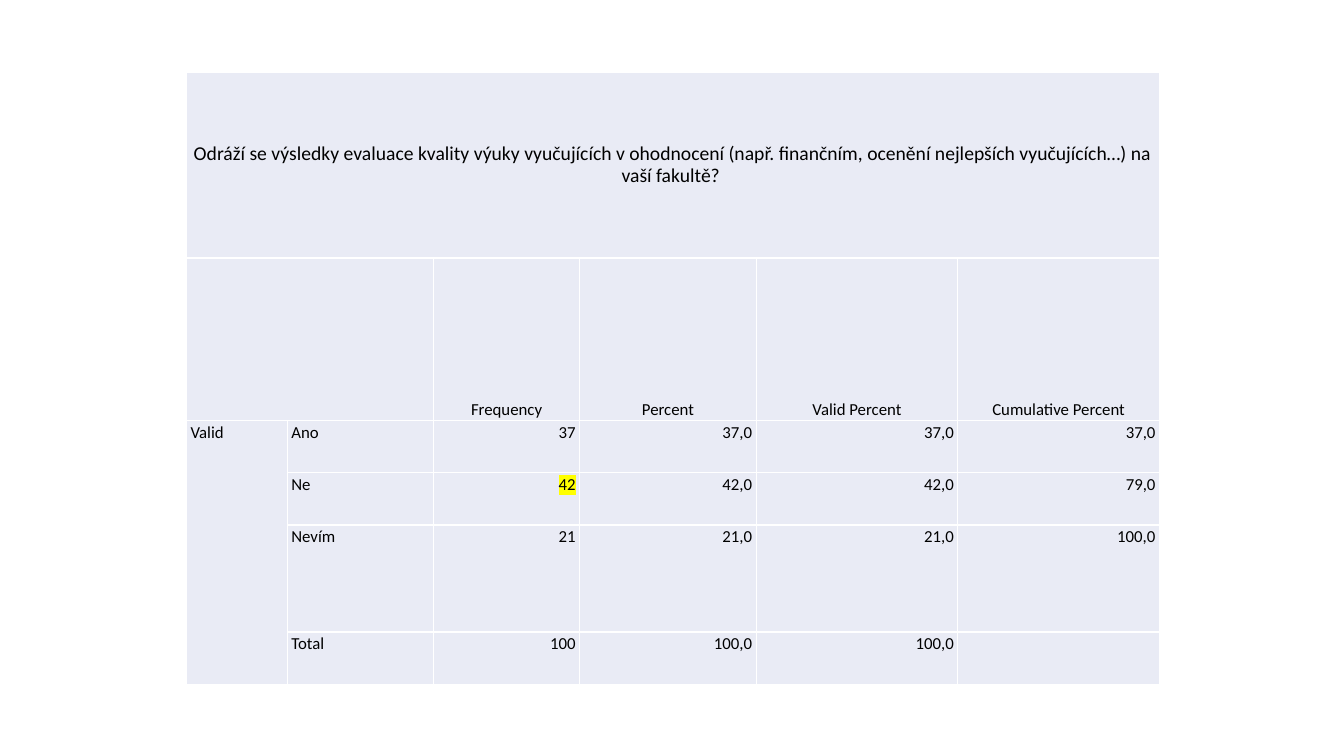
from lxml import etree
from pptx import Presentation
from pptx.dml.color import RGBColor
from pptx.enum.text import MSO_ANCHOR, PP_ALIGN
from pptx.oxml.ns import qn
from pptx.util import Inches, Pt

LEFT, CENTER, RIGHT = PP_ALIGN.LEFT, PP_ALIGN.CENTER, PP_ALIGN.RIGHT
TOP, MIDDLE, BOTTOM = MSO_ANCHOR.TOP, MSO_ANCHOR.MIDDLE, MSO_ANCHOR.BOTTOM

COLORS = {"cell": "E9EBF5", "border": "FFFFFF", "text": "000000", "mark": "FFFF00"}
FONT = "Calibri"
SIDE_MARGIN = Inches(0.04)
COLUMN_WIDTHS = [1, 1.45, 1.45, 1.75, 2, 2]
ROW_HEIGHTS = [1.84, 1.61, 0.52, 0.52, 1.06, 0.52]
QUESTION = "Odráží se výsledky evaluace kvality výuky vyučujících v ohodnocení (např. finančním, ocenění nejlepších vyučujících…) na vaší fakultě? "
ROWS = [
    [QUESTION, "", "", "", "", ""],
    ["", "", "Frequency", "Percent", "Valid Percent", "Cumulative Percent"],
    ["Valid", "Ano", "37", "37,0", "37,0", "37,0"],
    ["", "Ne", "42", "42,0", "42,0", "79,0"],
    ["", "Nevím", "21", "21,0", "21,0", "100,0"],
    ["", "Total", "100", "100,0", "100,0", ""],
]
MARKED_CELL = (3, 2)


def add_color(parent, tag, color):
    holder = etree.SubElement(parent, qn(tag))
    etree.SubElement(holder, qn("a:srgbClr"), val=COLORS[color])


def write_text(cell, text, size, alignment, marked):
    paragraph = cell.text_frame.paragraphs[0]
    paragraph.alignment = alignment
    paragraph.line_spacing = Pt(16)
    paragraph.space_after = Pt(8)
    properties = paragraph._p.get_or_add_pPr()
    for side in ("marL", "marR"):
        properties.set(side, str(SIDE_MARGIN))
    properties.set("indent", "0")
    run = paragraph.add_run()
    run.text = text
    run.font.size = Pt(size)
    run.font.color.rgb = RGBColor.from_string(COLORS["text"])
    if marked:
        add_color(run._r.get_or_add_rPr(), "a:highlight", "mark")
    run.font.name = FONT


presentation = Presentation()
presentation.slide_width = Inches(13.33)
presentation.slide_height = Inches(7.5)
slide = presentation.slides.add_slide(presentation.slide_layouts[6])

shape = slide.shapes.add_table(
    len(ROW_HEIGHTS), len(COLUMN_WIDTHS), Inches(1.85), Inches(0.72),
    Inches(sum(COLUMN_WIDTHS)), Inches(sum(ROW_HEIGHTS)))
table = shape.table
table.first_row = False
table.horz_banding = False
for column, width in zip(table.columns, COLUMN_WIDTHS):
    column.width = Inches(width)
for row, height in zip(table.rows, ROW_HEIGHTS):
    row.height = Inches(height)

table.cell(0, 0).merge(table.cell(0, 5))
table.cell(1, 0).merge(table.cell(1, 1))
table.cell(2, 0).merge(table.cell(5, 0))

for row_index, texts in enumerate(ROWS):
    anchor = {0: MIDDLE, 1: BOTTOM}.get(row_index, TOP)
    size = 14 if row_index == 0 else 12
    for column_index, text in enumerate(texts):
        cell = table.cell(row_index, column_index)
        cell.margin_left = cell.margin_right = 0
        cell.margin_top = cell.margin_bottom = 0
        cell.vertical_anchor = anchor
        cell_properties = cell._tc.get_or_add_tcPr()
        for edge in ("a:lnL", "a:lnR", "a:lnT", "a:lnB"):
            border = etree.SubElement(cell_properties, qn(edge), w=str(Pt(1)))
            add_color(border, "a:solidFill", "border")
        cell.fill.solid()
        cell.fill.fore_color.rgb = RGBColor.from_string(COLORS["cell"])
        if text:
            alignment = CENTER if row_index < 2 else LEFT if column_index < 2 else RIGHT
            marked = (row_index, column_index) == MARKED_CELL
            write_text(cell, text, size, alignment, marked)

presentation.save("out.pptx")
